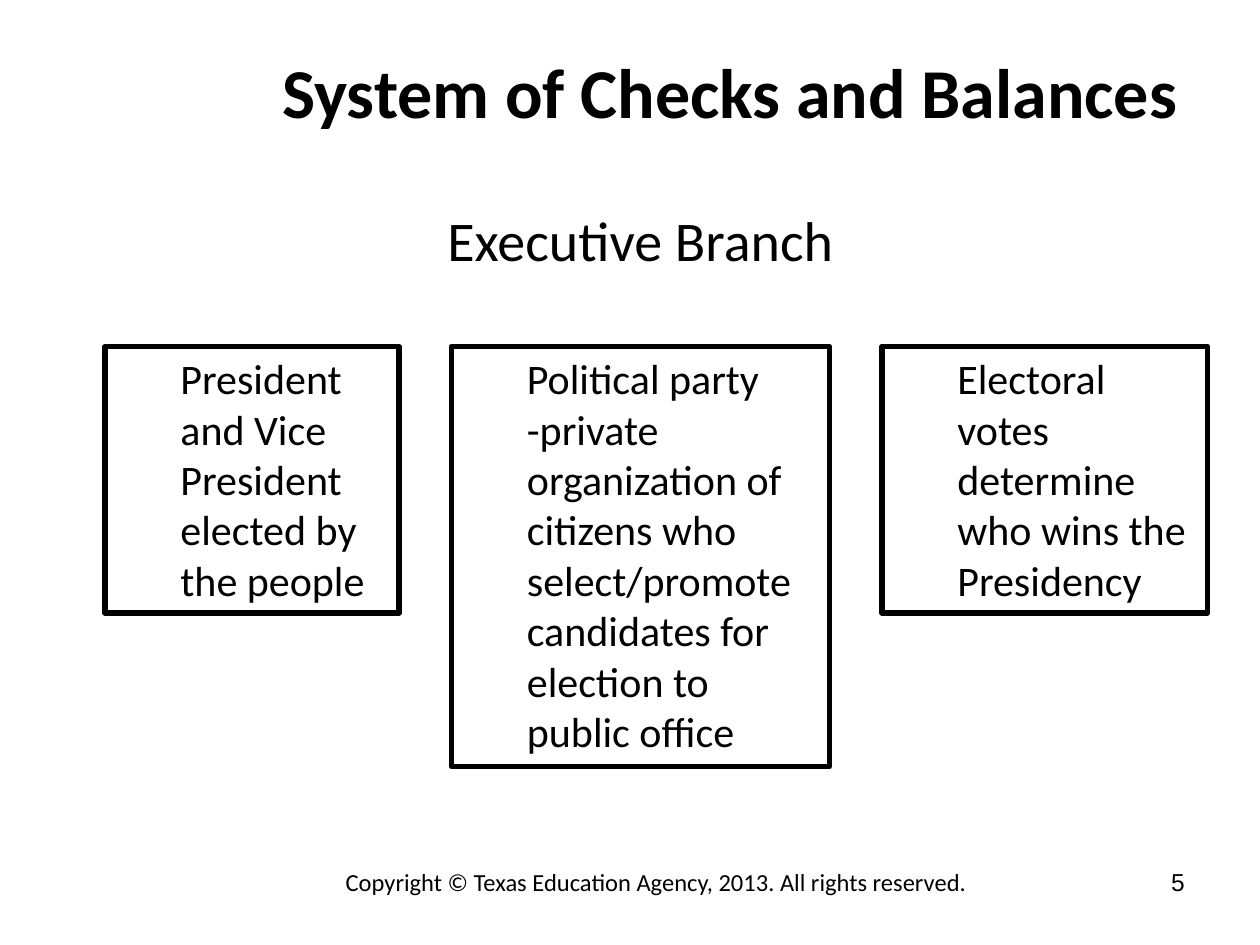
from pptx import Presentation, util as u
from pptx.dml.color import RGBColor
from pptx.enum import shapes, text

COLORS = {"ink": "000000", "paper": "FFFFFF"}
WIDTH, HEIGHT = 10, 7.5
COLUMNS, ROWS = 120, 90  # square grid cells of 1/12 inch
CENTER, RIGHT, LEFT = text.PP_ALIGN.CENTER, text.PP_ALIGN.RIGHT, text.PP_ALIGN.LEFT

# Content: wording, (column, row, columns, rows), size, font, bold, alignment
LABELS = [
    ("Executive Branch", (37, 19, 48, 7.68), 32, "Calibri", False, CENTER),
    ("System of Checks and Balances", (19, 4, 101, 9.24), 40, "Calibri", True, CENTER),
    ("5", (86, 82, 28, 6.24), 14, "Arial", False, RIGHT),
    ("Copyright © Texas Education Agency, 2013. All rights reserved.",
     (24, 82, 77, 6.24), 14, "Calibri", False, CENTER),
]

# Content: wording, first column, columns, rows
FACTS_ROW = 33
FACTS = [
    ("President and Vice President elected by the people", 10, 28, 25.4),
    ("Political party -private organization of citizens who "
     "select/promote candidates for election to public office", 43, 36, 40),
    ("Electoral votes determine who wins the Presidency", 84, 31, 25.4),
]


def place(column, row, columns, rows):
    return (u.Inches(column * WIDTH / COLUMNS), u.Inches(row * HEIGHT / ROWS),
            u.Inches(columns * WIDTH / COLUMNS), u.Inches(rows * HEIGHT / ROWS))


def write(holder, words, size, font, bold, align):
    frame = holder.text_frame
    frame.word_wrap = True
    frame.vertical_anchor = text.MSO_ANCHOR.TOP
    paragraph = frame.paragraphs[0]
    paragraph.alignment = align
    run = paragraph.add_run()
    run.text = words
    run.font.size = u.Pt(size)
    run.font.name = font
    run.font.bold = bold
    run.font.color.rgb = RGBColor.from_string(COLORS["ink"])
    return paragraph


presentation = Presentation()
presentation.slide_width, presentation.slide_height = u.Inches(WIDTH), u.Inches(HEIGHT)
slide = presentation.slides.add_slide(presentation.slide_layouts[6])
slide.background.fill.solid()
slide.background.fill.fore_color.rgb = RGBColor.from_string(COLORS["paper"])

# Headings and footer
for words, cell, size, font, bold, align in LABELS:
    label = slide.shapes.add_textbox(*place(*cell))
    write(label, words, size, font, bold, align)

# Outlined facts about the branch
for words, column, columns, rows in FACTS:
    fact = slide.shapes.add_shape(shapes.MSO_SHAPE.RECTANGLE,
                                  *place(column, FACTS_ROW, columns, rows))
    fact.shadow.inherit = False
    fact.fill.background()
    fact.line.color.rgb = RGBColor.from_string(COLORS["ink"])
    fact.line.width = u.Pt(3)
    paragraph = write(fact, words, 24, "Calibri", False, LEFT)
    paragraph.level = 1
    indent = paragraph._p.get_or_add_pPr()
    indent.set("marL", str(u.Inches(0.5)))
    indent.set("indent", "0")

presentation.save("out.pptx")
